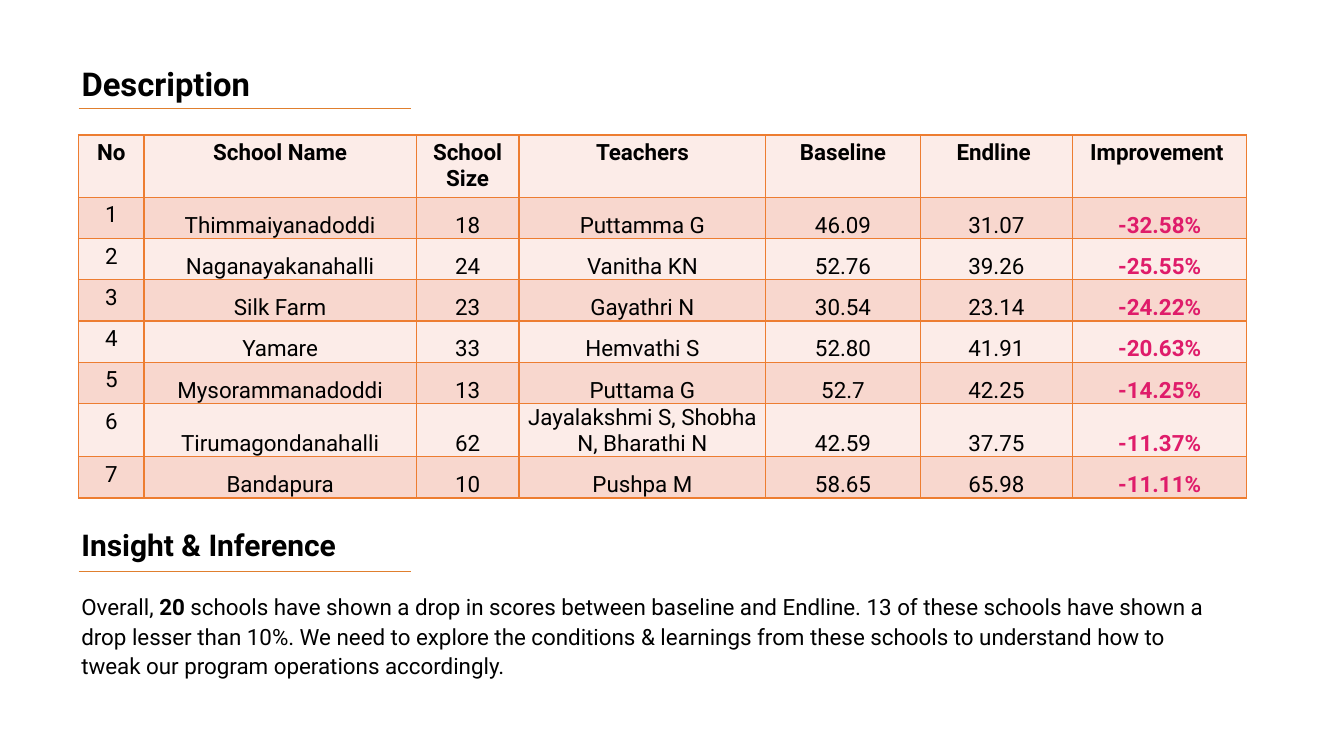
"""Build the slide on schools whose scores dropped between baseline and endline."""
from lxml.etree import SubElement
from pptx import Presentation
from pptx.dml.color import RGBColor
from pptx.enum.shapes import MSO_CONNECTOR as Connector
from pptx.enum.text import MSO_ANCHOR as Anchor, MSO_AUTO_SIZE as AutoSize, PP_ALIGN as Align
from pptx.oxml.ns import qn
from pptx.util import Cm, Pt

BLACK = RGBColor(0x00, 0x00, 0x00)
PINK = RGBColor(0xDF, 0x1C, 0x6A)
LIGHT = RGBColor(0xFC, 0xEC, 0xE8)
PEACH = RGBColor(0xF8, 0xD7, 0xCE)
BORDER = RGBColor(0xED, 0x7D, 0x31)
RULE = RGBColor(0xE0, 0x7F, 0x2E)

HEADER = ["No", "School Name", "School Size", "Teachers", "Baseline", "Endline ", "Improvement "]
SCHOOLS = [
    ["1", "Thimmaiyanadoddi", "18", "Puttamma G", "46.09", "31.07", "-32.58%"],
    ["2", "Naganayakanahalli", "24", "Vanitha KN", "52.76", "39.26", "-25.55%"],
    ["3", "Silk Farm", "23", "Gayathri N", "30.54", "23.14", "-24.22%"],
    ["4", "Yamare", "33", "Hemvathi S", "52.80", "41.91", "-20.63%"],
    ["5", "Mysorammanadoddi", "13", "Puttama G", "52.7", "42.25", "-14.25%"],
    ["6", "Tirumagondanahalli", "62", "Jayalakshmi S, Shobha N, Bharathi N", "42.59", "37.75", "-11.37%"],
    ["7", "Bandapura", "10", "Pushpa M", "58.65", "65.98", "-11.11%"],
]
COLUMN_WIDTHS = [1.65, 6.86, 2.59, 6.22, 3.89, 3.84, 4.39]


def write(frame, *parts, size=16, bold=False, color=BLACK, align=Align.LEFT, spacing=None):
    """Fill a frame with one paragraph, where every second part has the opposite weight."""
    frame.word_wrap = True
    paragraph = frame.paragraphs[0]
    paragraph.alignment = align
    paragraph.line_spacing = spacing
    for index, part in enumerate(parts):
        run = paragraph.add_run()
        run.text = part
        run.font.name = "Roboto"
        run.font.size = Pt(size)
        run.font.bold = bold != (index % 2 == 1)
        run.font.color.rgb = color


def add_borders(cell):
    """Draw a thin line on all four sides of a table cell."""
    properties = cell._tc.get_or_add_tcPr()
    for side in ("a:lnL", "a:lnR", "a:lnT", "a:lnB"):
        line = SubElement(properties, qn(side), w=str(Pt(1)))
        fill = SubElement(line, qn("a:solidFill"))
        SubElement(fill, qn("a:srgbClr"), val=str(BORDER))


deck = Presentation()
deck.slide_width, deck.slide_height = Cm(33.87), Cm(19.05)
slide = deck.slides.add_slide(deck.slide_layouts[5])

rows = [HEADER] + SCHOOLS
scores = slide.shapes.add_table(
    len(rows), len(HEADER), Cm(1.98), Cm(3.4), Cm(sum(COLUMN_WIDTHS)), Cm(9.17)
).table
for column, width in zip(scores.columns, COLUMN_WIDTHS):
    column.width = Cm(width)

for row_index, values in enumerate(rows):
    is_header = row_index == 0
    scores.rows[row_index].height = Cm(0.87 if is_header else 1.04)
    for column_index, value in enumerate(values):
        cell = scores.cell(row_index, column_index)
        is_improvement = not is_header and column_index == len(HEADER) - 1
        write(cell.text_frame, value, bold=is_header or is_improvement,
              color=PINK if is_improvement else BLACK, align=Align.CENTER)
        if not is_header and column_index > 0:
            cell.vertical_anchor = Anchor.BOTTOM
            cell.margin_left = cell.margin_right = cell.margin_top = Cm(0.03)
            cell.margin_bottom = 0
        add_borders(cell)
        cell.fill.solid()
        cell.fill.fore_color.rgb = PEACH if row_index % 2 else LIGHT

insight = slide.shapes.add_textbox(Cm(1.8), Cm(14.76), Cm(28.83), Cm(2.72))
write(
    insight.text_frame,
    "Overall, ",
    "20",
    " schools have shown a drop in scores between baseline and Endline. 13 of these schools have "
    "shown a drop lesser than 10%. We need to explore the conditions & learnings from these schools "
    "to understand how to tweak our program operations accordingly.",
    spacing=1.1,
)

description = slide.shapes.title
inference = slide.shapes.add_textbox(0, 0, 0, 0)
headings = [
    (description, "Description", 23.4, 1.22, 2.74),
    (inference, "Insight & Inference", 21.4, 12.85, 14.4),
]
for heading, text, size, top, rule_top in headings:
    heading.left, heading.top = Cm(1.8), Cm(top)
    heading.width, heading.height = Cm(8.05), Cm(1.88)
    heading.text_frame.auto_size = AutoSize.NONE
    heading.text_frame.vertical_anchor = Anchor.MIDDLE
    write(heading.text_frame, text, size=size, bold=True, spacing=0.9)

    underline = slide.shapes.add_connector(
        Connector.STRAIGHT, Cm(1.98), Cm(rule_top), Cm(10.36), Cm(rule_top)
    )
    underline.line.color.rgb = RULE
    underline.line.width = Pt(1)
    SubElement(underline._element.spPr, qn("a:effectLst"))

deck.save("out.pptx")
